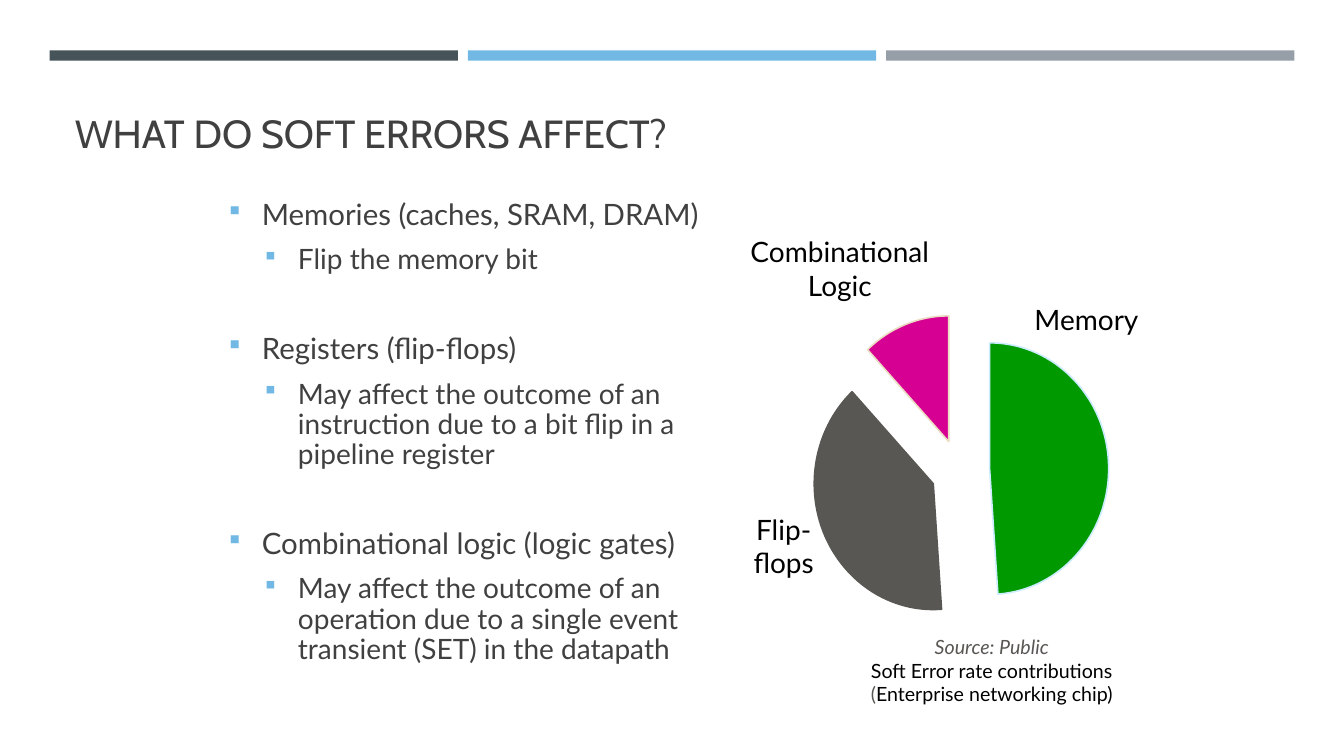
import math

from lxml import etree
from pptx import Presentation
from pptx import util as u
from pptx.dml import color
from pptx.enum import shapes, text
from pptx.oxml import ns

BODY_FONT, TITLE_FONT = "Lato", "Cabin"
INK, BLACK, BLUE, GREY = "404040", "000000", "71B9E4", "585753"
RADIUS_X, RADIUS_Y = 3.0, 3.17

TOPICS = [
    ("Memories (caches, SRAM, DRAM)", "Flip the memory bit"),
    ("Registers (flip-flops)",
     "May affect the outcome of an instruction due to a bit flip in a pipeline register"),
    ("Combinational logic (logic gates)",
     "May affect the outcome of an operation due to a single event transient (SET) in the datapath"),
]
# Apex x, apex y, angles clockwise from the top where arcs meet, fill, line
SLICES = [
    (6.52, 5.89, [0, 90, 176], "009900", "CCECFF"),
    (5.1, 6.27, [176, 180, 270, 317], GREY, GREY),
    (5.49, 5.21, [317, 360], "D60093", "EBDDC3"),
]
# Paragraphs, then left, top, width, height
LABELS = [
    (["Combinational Logic"], 0, 0, 5.49, 1.7),
    (["Flip-", "flops"], 0.2, 6.99, 2.26, 1.7),
    (["Memory"], 6.93, 1.7, 4.06, 0.86),
]


def rgb(value):
    return color.RGBColor.from_string(value)


def set_font(font, size, shade, name=BODY_FONT):
    font.name = name
    font.size = u.Pt(size)
    font.color.rgb = rgb(shade)


def paint(shape, fill, line=None):
    shape.shadow.inherit = False
    shape.fill.solid()
    shape.fill.fore_color.rgb = rgb(fill)
    if line:
        shape.line.color.rgb = rgb(line)
        shape.line.width = u.Pt(1.13)
    else:
        shape.line.fill.background()


def add_bullet(para, indent):
    props = para._p.get_or_add_pPr()
    props.set("marL", str(u.Cm(indent)))
    props.set("indent", str(u.Cm(-0.84)))
    shade = etree.SubElement(props, ns.qn("a:buClr"))
    etree.SubElement(shade, ns.qn("a:srgbClr"), val=BLUE)
    etree.SubElement(props, ns.qn("a:buSzPct"), val="92000")
    etree.SubElement(props, ns.qn("a:buFont"), typeface="Wingdings", charset="2")
    etree.SubElement(props, ns.qn("a:buChar"), char="§")


def add_text(page, left, top, width, height, lines, size):
    """Add a centred text box without margins and return its paragraphs."""
    box = page.shapes.add_textbox(u.Cm(left), u.Cm(top), u.Cm(width), u.Cm(height))
    frame = box.text_frame
    frame.word_wrap = True
    frame.margin_left = frame.margin_right = frame.margin_top = frame.margin_bottom = 0
    frame.text = "\n".join(lines)
    for para in frame.paragraphs:
        para.alignment = text.PP_ALIGN.CENTER
        set_font(para.font, size, BLACK)
    return frame.paragraphs


def add_bars(page, left, top, width, height):
    gap = 0.25
    bar_width = (width - 2 * gap) / 3
    for index, fill in enumerate(["465359", BLUE, "969FA7"]):
        bar = page.shapes.add_shape(
            shapes.MSO_SHAPE.RECTANGLE, u.Cm(left + index * (bar_width + gap)),
            u.Cm(top), u.Cm(bar_width), u.Cm(height))
        paint(bar, fill)


def add_title(page, left, top, width, height):
    title = page.shapes.title
    title.left, title.top = u.Cm(left), u.Cm(top)
    title.width, title.height = u.Cm(width), u.Cm(height)
    frame = title.text_frame
    frame.text = "WHAT DO SOFT ERRORS AFFECT?"
    frame.vertical_anchor = text.MSO_ANCHOR.BOTTOM
    para = frame.paragraphs[0]
    para.alignment = text.PP_ALIGN.LEFT
    set_font(para.font, 28, INK, TITLE_FONT)


def add_topics(page, left, top, width, height):
    box = page.shapes.add_textbox(u.Cm(left), u.Cm(top), u.Cm(width), u.Cm(height))
    frame = box.text_frame
    frame.word_wrap = True
    frame.vertical_anchor = text.MSO_ANCHOR.MIDDLE
    frame.text = "\n".join(line for topic in TOPICS for line in topic)
    for index, para in enumerate(frame.paragraphs):
        para.level = index % 2
        para.line_spacing = 0.9
        if index:
            para.space_before = u.Pt(4.2 if para.level else 35.4)
        para.space_after = u.Pt(6)
        add_bullet(para, 1.75 if para.level else 0.84)
        set_font(para.font, 20 if para.level else 21, INK)


def add_slice(page, x, y, angles, fill, line):
    """Draw a slice with its apex at x, y and one curve per pair of angles."""
    def rim(angle, pull=0.0):
        a = math.radians(angle)
        return (u.Cm(x + RADIUS_X * (math.sin(a) + pull * math.cos(a))),
                u.Cm(y - RADIUS_Y * (math.cos(a) - pull * math.sin(a))))

    points = []
    for start, end in zip(angles, angles[1:]):
        pull = 4 / 3 * math.tan(math.radians(end - start) / 4)
        points += [rim(start, pull), rim(end, -pull), rim(end)]
    builder = page.shapes.build_freeform(*rim(angles[0]))
    builder.add_line_segments(points + [(u.Cm(x), u.Cm(y))], close=True)
    shape = builder.convert_to_shape()
    paint(shape, fill, line)

    # Turn every three rim points into one curve
    steps = list(shape._element.iter(ns.qn("a:lnTo")))[:len(points)]
    for index in range(0, len(steps), 3):
        curve = etree.Element(ns.qn("a:cubicBezTo"))
        steps[index].addprevious(curve)
        for step in steps[index:index + 3]:
            curve.append(step[0])
            step.getparent().remove(step)


def add_pie(page, left, top, width, height):
    # Slices pulled apart
    for apex_x, apex_y, angles, fill, line in SLICES:
        add_slice(page, left + apex_x, top + apex_y, angles, fill, line)

    # Slice labels
    for lines, dx, dy, label_width, label_height in LABELS:
        add_text(page, left + dx, top + dy, label_width, label_height, lines, 20)

    # Caption along the bottom
    caption_width, caption_height = 8.43, 1.8
    source, _, chip = add_text(
        page, left + width - caption_width, top + height - caption_height,
        caption_width, caption_height,
        ["Source: Public", "Soft Error rate contributions", "("], 14)
    source.font.italic = True
    source.font.color.rgb = rgb(GREY)
    chip.runs[0].font.color.rgb = rgb(GREY)
    span = chip.add_run()
    span.text = "Enterprise networking chip)"


def main():
    deck = Presentation()
    deck.slide_width, deck.slide_height = u.Cm(33.87), u.Cm(19.05)
    page = deck.slides.add_slide(deck.slide_layouts[5])
    add_bars(page, 1.25, 1.27, 31.37, 0.26)
    add_title(page, 1.63, 1.96, 30.63, 2.1)
    add_topics(page, 5.51, 4.78, 12.5, 12.24)
    add_pie(page, 18.42, 5.92, 10.79, 11.88)
    deck.save("out.pptx")


if __name__ == "__main__":
    main()
